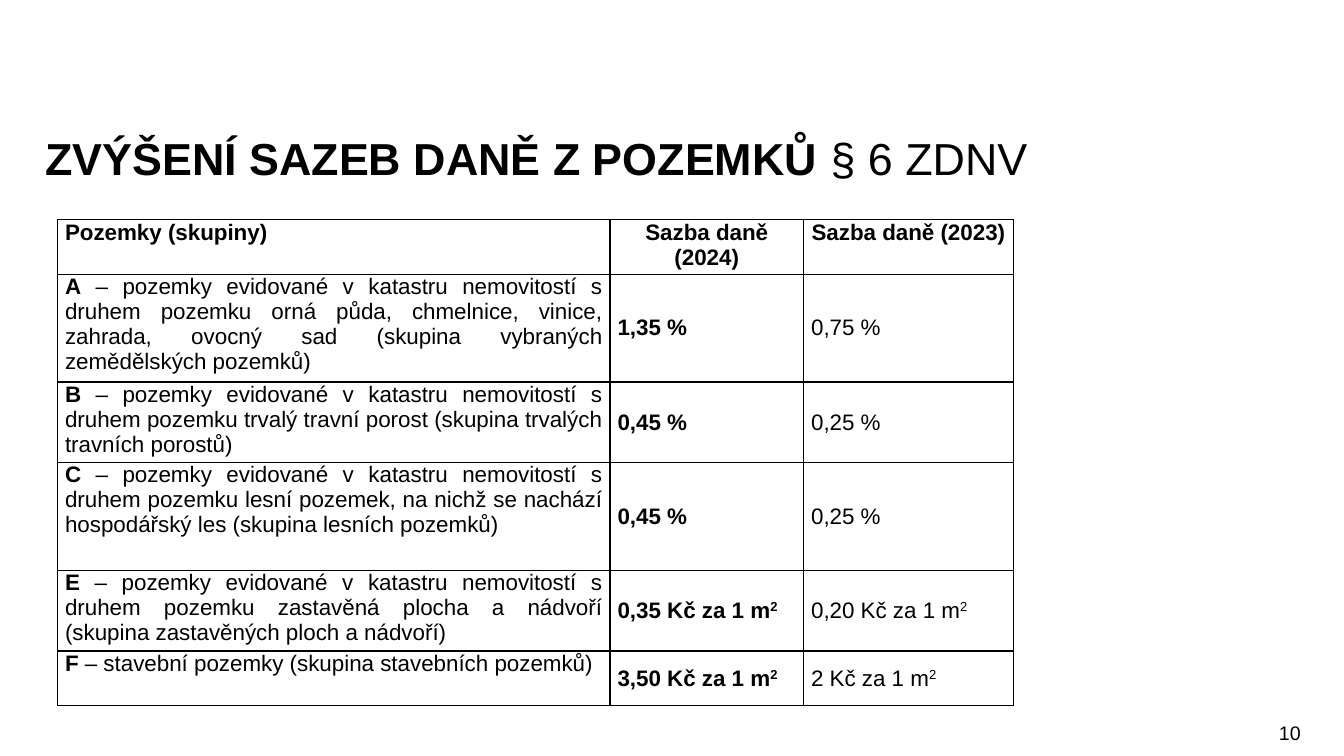
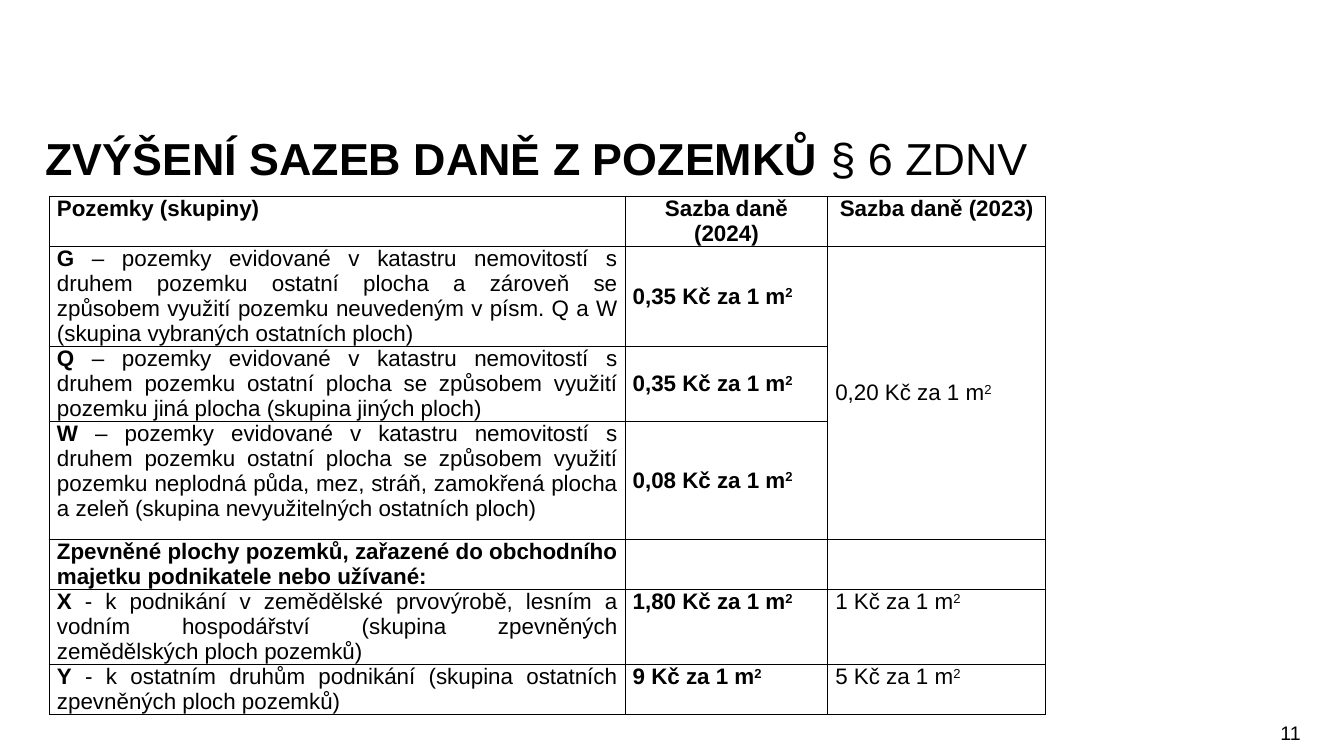
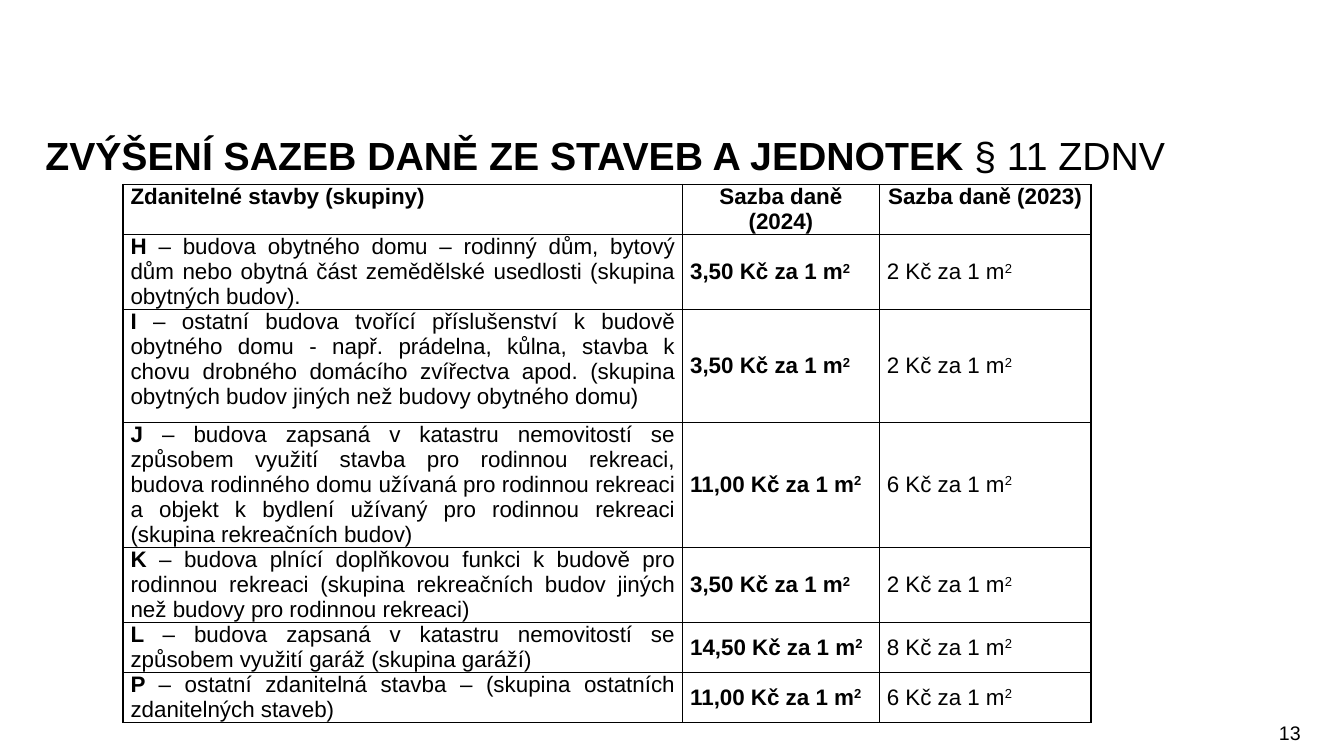
from lxml import etree
from pptx import Presentation
from pptx.dml.color import RGBColor
from pptx.enum.text import MSO_ANCHOR, MSO_AUTO_SIZE, PP_ALIGN
from pptx.oxml.ns import qn
from pptx.util import Inches, Pt

TOP, MIDDLE = MSO_ANCHOR.TOP, MSO_ANCHOR.MIDDLE
LEFT, CENTER = PP_ALIGN.LEFT, PP_ALIGN.CENTER
RIGHT, JUSTIFY = PP_ALIGN.RIGHT, PP_ALIGN.JUSTIFY
NO_AUTOFIT = MSO_AUTO_SIZE.NONE

RATE_HEADERS = ["Sazba daně (2024)", "Sazba daně (2023)"]
SQUARE_METRE = "m2"
LAND_TITLE = "ZVÝŠENÍ SAZEB DANĚ Z POZEMKŮ "


def rgb(value):
    return RGBColor.from_string(value)


class Deck:
    FONT = "Arial"
    INK = "000000"
    CELL_SIZE = 16
    CELL_LINE = Pt(17.85)
    CELL_INSET = Pt(5.4)
    BORDER = Pt(1)

    def __init__(self):
        self.prs = Presentation()
        self.prs.slide_width = Inches(13.33)
        self.prs.slide_height = Inches(7.5)
        self.s = None

    def run(self, p, text, size, bold=False):
        r = p.add_run()
        r.text = text
        r.font.name = self.FONT
        r.font.size = Pt(size)
        r.font.bold = bold
        r.font.color.rgb = rgb(self.INK)
        return r

    def slide(self, title, section, number, size=32):
        """Start a slide with a bold title, a plain section mark and a page number."""
        self.s = self.prs.slides.add_slide(self.prs.slide_layouts[5])
        self.title(title, section, size)
        self.page_number(number)

    def title(self, title, section, size):
        sp = self.s.shapes.title
        sp.left, sp.top = Inches(0.35), Inches(1.31)
        sp.width, sp.height = Inches(12.65), Inches(0.75)
        tf = sp.text_frame
        tf.auto_size = NO_AUTOFIT
        tf.word_wrap = True
        tf.vertical_anchor = TOP
        p = tf.paragraphs[0]
        p.alignment = LEFT
        p.line_spacing = 0.9
        self.run(p, title, size, bold=True)
        self.run(p, section, size)

    def page_number(self, number):
        sp = self.s.shapes.add_textbox(Inches(11.23), Inches(7.1), Inches(1.77), Inches(0.39))
        tf = sp.text_frame
        tf.word_wrap = True
        p = tf.paragraphs[0]
        p.alignment = RIGHT
        self.run(p, str(number), 14)

    def borders(self, cell):
        tcPr = cell._tc.get_or_add_tcPr()
        for i, side in enumerate(("lnL", "lnR", "lnT", "lnB")):
            ln = etree.Element(qn(f"a:{side}"), w=str(self.BORDER))
            fill = etree.SubElement(ln, qn("a:solidFill"))
            etree.SubElement(fill, qn("a:srgbClr"), val=self.INK)
            tcPr.insert(i, ln)

    def cell(self, cell, parts, align=JUSTIFY, anchor=TOP):
        """Fill a cell with (text, bold) parts; a closing m2 gets a raised 2."""
        cell.fill.background()
        self.borders(cell)
        cell.margin_left = cell.margin_right = self.CELL_INSET
        cell.margin_top = cell.margin_bottom = 0
        cell.vertical_anchor = anchor
        p = cell.text_frame.paragraphs[0]
        p.alignment = align
        p.line_spacing = self.CELL_LINE
        for text, bold in parts:
            if text.endswith(SQUARE_METRE):
                self.run(p, text[:-1], self.CELL_SIZE, bold)
                r = self.run(p, text[-1], self.CELL_SIZE, bold)
                r._r.get_or_add_rPr().set("baseline", "30000")
            elif text:
                self.run(p, text, self.CELL_SIZE, bold)

    def rate_table(self, left, top, widths, heights, group_header, rows, top_rows=()):
        """Rows are (group, description, rate 2024, rate 2023); None joins the cell above."""
        frame = self.s.shapes.add_table(len(heights), len(widths), Inches(left), Inches(top),
                                        Inches(sum(widths)), Inches(sum(heights)))
        table = frame.table
        table.first_row = table.horz_banding = False
        for column, width in zip(table.columns, widths):
            column.width = Inches(width)
        for row, height in zip(table.rows, heights):
            row.height = Inches(height)
        self.cell(table.cell(0, 0), [(group_header, True)])
        for c, text in enumerate(RATE_HEADERS, 1):
            self.cell(table.cell(0, c), [(text, True)], CENTER)
        joined = []
        for n, (group, description, new_rate, old_rate) in enumerate(rows, 1):
            anchor = TOP if group in top_rows else MIDDLE
            self.cell(table.cell(n, 0), [(group, True), (description, False)])
            self.cell(table.cell(n, 1), [(new_rate, True)], anchor=anchor)
            self.cell(table.cell(n, 2), [(old_rate or "", False)], anchor=anchor)
            if old_rate is None:
                joined.append(n)
        if joined:
            table.cell(joined[0] - 1, 2).merge(table.cell(joined[-1], 2))


def main():
    deck = Deck()

    deck.slide(LAND_TITLE, "§ 6 ZDNV", 10)
    deck.rate_table(0.57, 2.18, [5.48, 1.92, 2.08], [0.54, 1.07, 0.8, 1.07, 0.8, 0.54],
                    "Pozemky (skupiny)", [
        ("A", " – pozemky evidované v katastru nemovitostí s druhem pozemku orná půda, chmelnice, "
              "vinice, zahrada, ovocný sad (skupina vybraných zemědělských pozemků)",
         "1,35 %", "0,75 %"),
        ("B", " – pozemky evidované v katastru nemovitostí s druhem pozemku trvalý travní porost "
              "(skupina trvalých travních porostů)",
         "0,45 %", "0,25 %"),
        ("C", " – pozemky evidované v katastru nemovitostí s druhem pozemku lesní pozemek, "
              "na nichž se nachází hospodářský les (skupina lesních pozemků)",
         "0,45 %", "0,25 %"),
        ("E", " – pozemky evidované v katastru nemovitostí s druhem pozemku zastavěná plocha "
              "a nádvoří (skupina zastavěných ploch a nádvoří)",
         "0,35 Kč za 1 m2", "0,20 Kč za 1 m2"),
        ("F", " – stavební pozemky (skupina stavebních pozemků)",
         "3,50 Kč za 1 m2", "2 Kč za 1 m2"),
    ])

    deck.slide(LAND_TITLE, "§ 6 ZDNV", 11)
    deck.rate_table(0.49, 1.95, [5.71, 2.01, 2.16], [0.49, 0.99, 0.74, 1.17, 0.49, 0.74, 0.49],
                    "Pozemky (skupiny)", [
        ("G ", "– pozemky evidované v katastru nemovitostí s druhem pozemku ostatní plocha "
               "a zároveň se způsobem využití pozemku neuvedeným v písm. Q a W "
               "(skupina vybraných ostatních ploch)",
         "0,35 Kč za 1 m2", "0,20 Kč za 1 m2"),
        ("Q", " – pozemky evidované v katastru nemovitostí s druhem pozemku ostatní plocha "
              "se způsobem využití pozemku jiná plocha (skupina jiných ploch)",
         "0,35 Kč za 1 m2", None),
        ("W", " – pozemky evidované v katastru nemovitostí s druhem pozemku ostatní plocha "
              "se způsobem využití pozemku neplodná půda, mez, stráň, zamokřená plocha a zeleň "
              "(skupina nevyužitelných ostatních ploch)",
         "0,08 Kč za 1 m2", None),
        ("Zpevněné plochy pozemků, zařazené do obchodního majetku podnikatele nebo užívané:",
         "", "", ""),
        ("X", " ‑ k podnikání v zemědělské prvovýrobě, lesním a vodním hospodářství "
              "(skupina zpevněných zemědělských ploch pozemků)",
         "1,80 Kč za 1 m2", "1 Kč za 1 m2"),
        ("Y", " ‑ k ostatním druhům podnikání (skupina ostatních zpevněných ploch pozemků)",
         "9 Kč za 1 m2", "5 Kč za 1 m2"),
    ], top_rows=("X", "Y"))

    deck.slide("ZVÝŠENÍ SAZEB DANĚ ZE STAVEB A JEDNOTEK ", "§ 11 ZDNV", 13, size=28)
    deck.rate_table(1.22, 1.83, [5.55, 1.95, 2.1], [0.49, 0.74, 1.12, 1.24, 0.74, 0.49, 0.49],
                    "Zdanitelné stavby (skupiny)", [
        ("H ", "– budova obytného domu – rodinný dům, bytový dům nebo obytná část zemědělské "
               "usedlosti (skupina obytných budov).",
         "3,50 Kč za 1 m2", "2 Kč za 1 m2"),
        ("I ", "– ostatní budova tvořící příslušenství k budově obytného domu - např. prádelna, "
               "kůlna, stavba k chovu drobného domácího zvířectva apod. "
               "(skupina obytných budov jiných než budovy obytného domu)",
         "3,50 Kč za 1 m2", "2 Kč za 1 m2"),
        ("J ", "– budova zapsaná v katastru nemovitostí se způsobem využití stavba pro rodinnou "
               "rekreaci, budova rodinného domu užívaná pro rodinnou rekreaci a objekt k bydlení "
               "užívaný pro rodinnou rekreaci (skupina rekreačních budov)",
         "11,00 Kč za 1 m2", "6 Kč za 1 m2"),
        ("K ", "– budova plnící doplňkovou funkci k budově pro rodinnou rekreaci "
               "(skupina rekreačních budov jiných než budovy pro rodinnou rekreaci)",
         "3,50 Kč za 1 m2", "2 Kč za 1 m2"),
        ("L ", "– budova zapsaná v katastru nemovitostí se způsobem využití garáž "
               "(skupina garáží)",
         "14,50 Kč za 1 m2", "8 Kč za 1 m2"),
        ("P ", "– ostatní zdanitelná stavba – (skupina ostatních zdanitelných staveb)",
         "11,00 Kč za 1 m2", "6 Kč za 1 m2"),
    ])

    deck.prs.save("out.pptx")


if __name__ == "__main__":
    main()
